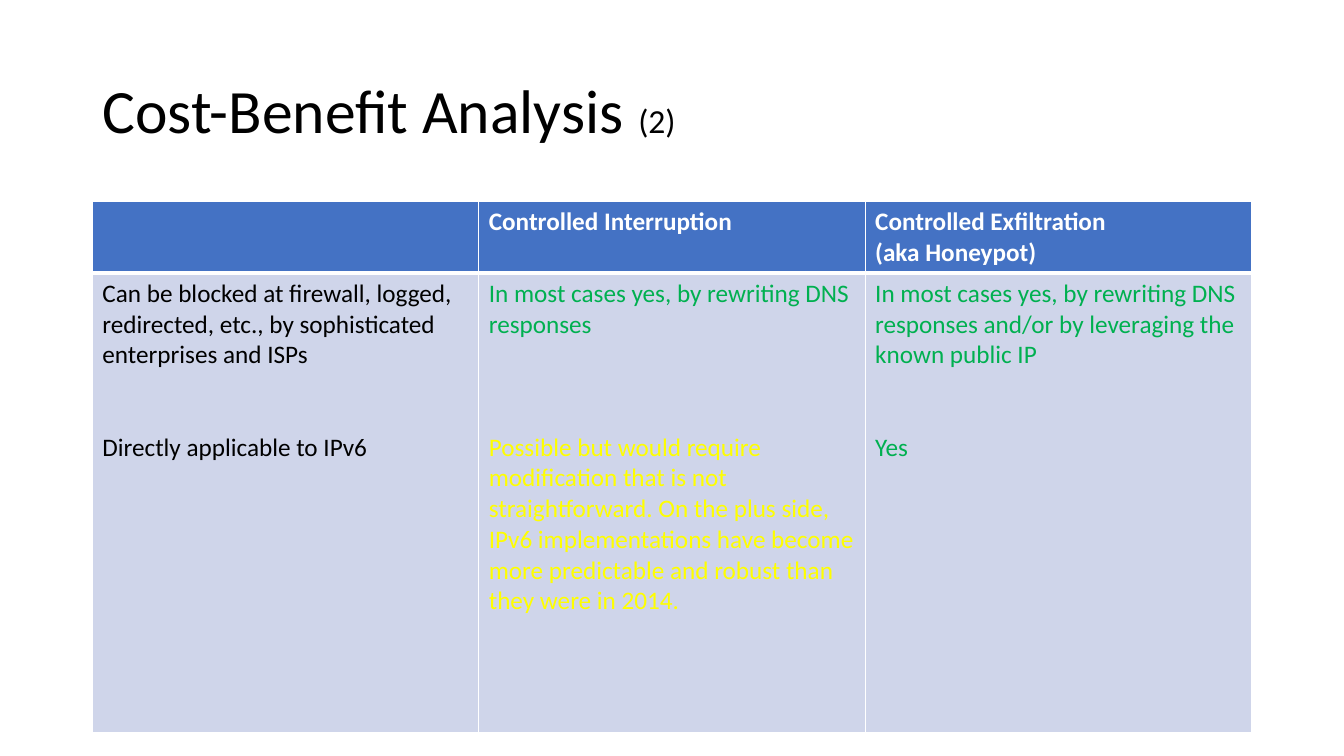
from dataclasses import dataclass

from lxml import etree
from pptx import Presentation
from pptx.dml.color import RGBColor
from pptx.enum.text import MSO_ANCHOR, MSO_AUTO_SIZE, PP_ALIGN
from pptx.oxml.ns import qn
from pptx.util import Pt

LEFT = PP_ALIGN.LEFT
TOP, MIDDLE = MSO_ANCHOR.TOP, MSO_ANCHOR.MIDDLE
NO_AUTOFIT = MSO_AUTO_SIZE.NONE
TITLE_ONLY_LAYOUT = 5


@dataclass(frozen=True)
class Theme:
    font: str = "Calibri"
    title_size: int = 44
    counter_size: int = 24
    table_size: int = 18
    text: str = "000000"
    white: str = "FFFFFF"
    header_fill: str = "4472C4"
    body_fill: str = "CFD5EA"
    good: str = "00B050"
    caution: str = "FFFF00"
    thin_border: int = 1
    thick_border: int = 3


THEME = Theme()
LINE = 22  # height of one line of table text
HEADERS = ["", "Controlled Interruption", "Controlled Exfiltration\v(aka Honeypot)"]
# Each column holds (text, colour, space before) per paragraph
COMPARISON = [
    [("Can be blocked at firewall, logged, redirected, etc., by sophisticated "
      "enterprises and ISPs", THEME.text, 0),
     ("Directly applicable to IPv6", THEME.text, 2 * LINE)],
    [("In most cases yes, by rewriting DNS responses", THEME.good, 0),
     ("Possible but would require modification that is not straightforward. "
      "On the plus side, IPv6 implementations have become more predictable and "
      "robust than they were in 2014.", THEME.caution, 3 * LINE)],
    [("In most cases yes, by rewriting DNS responses and/or by leveraging the "
      "known public IP", THEME.good, 0),
     ("Yes", THEME.good, 2 * LINE)],
]


def style_paragraph(paragraph, size, color, bold=False):
    paragraph.alignment = LEFT
    font = paragraph.font
    font.name, font.size, font.bold = THEME.font, Pt(size), bold
    font.color.rgb = RGBColor.from_string(color)


def style_cell(cell, fill, top_border, bottom_border):
    cell.vertical_anchor = TOP
    cell.fill.solid()
    cell.fill.fore_color.rgb = RGBColor.from_string(fill)
    properties = cell._tc.get_or_add_tcPr()
    widths = {"a:lnL": THEME.thin_border, "a:lnR": THEME.thin_border,
              "a:lnT": top_border, "a:lnB": bottom_border}
    for index, (side, width) in enumerate(widths.items()):
        line = etree.Element(qn(side), w=str(Pt(width)))
        solid = etree.SubElement(line, qn("a:solidFill"))
        etree.SubElement(solid, qn("a:srgbClr"), val=THEME.white)
        properties.insert(index, line)


def add_title(slide, left, top, width, height):
    title = slide.shapes.title
    title.left, title.top, title.width, title.height = map(Pt, (left, top, width, height))
    frame = title.text_frame
    frame.auto_size = NO_AUTOFIT
    frame.vertical_anchor = MIDDLE
    paragraph = frame.paragraphs[0]
    style_paragraph(paragraph, THEME.title_size, THEME.text)
    paragraph.line_spacing = 0.9
    for text, size in [("Cost-Benefit Analysis ", THEME.title_size),
                       ("(2)", THEME.counter_size)]:
        run = paragraph.add_run()
        run.text = text
        run.font.size = Pt(size)


def add_comparison_table(slide, left, top, width, height, header_height):
    frame = slide.shapes.add_table(2, len(HEADERS), Pt(left), Pt(top), Pt(width), Pt(height))
    table = frame.table
    table.rows[0].height = Pt(header_height)
    table.rows[1].height = Pt(height - header_height)

    for index, (header, entries) in enumerate(zip(HEADERS, COMPARISON)):
        table.columns[index].width = Pt(width / len(HEADERS))

        # Header cell
        cell = table.cell(0, index)
        style_cell(cell, THEME.header_fill, THEME.thin_border, THEME.thick_border)
        cell.text_frame.text = header
        style_paragraph(cell.text_frame.paragraphs[0], THEME.table_size, THEME.white, bold=True)

        # Body cell
        cell = table.cell(1, index)
        style_cell(cell, THEME.body_fill, THEME.thick_border, THEME.thin_border)
        cell.text_frame.text = "\n".join(text for text, _, _ in entries)
        for paragraph, (_, color, space) in zip(cell.text_frame.paragraphs, entries):
            style_paragraph(paragraph, THEME.table_size, color)
            paragraph.space_before = Pt(space)


def main():
    presentation = Presentation()
    presentation.slide_width, presentation.slide_height = Pt(960), Pt(540)
    slide = presentation.slides.add_slide(presentation.slide_layouts[TITLE_ONLY_LAYOUT])
    add_title(slide, 66, 28.75, 828, 104.4)
    add_comparison_table(slide, 66, 144, 828, 379, header_height=51)
    presentation.save("out.pptx")


if __name__ == "__main__":
    main()
